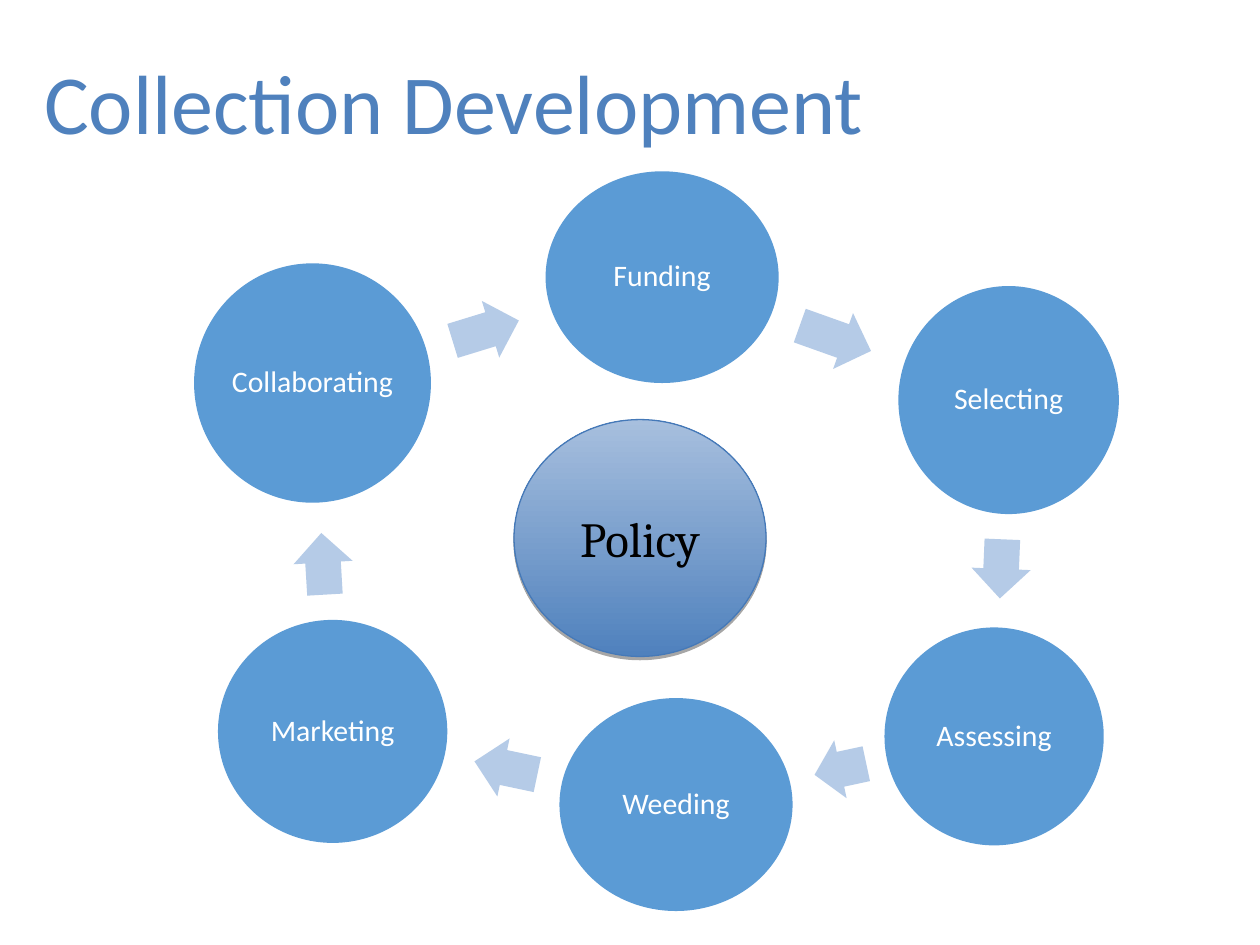
"""Build the Collection Development cycle slide."""
from lxml.etree import SubElement
from pptx import Presentation
from pptx.dml.color import RGBColor
from pptx.enum.shapes import MSO_SHAPE as SHAPE
from pptx.enum.text import MSO_ANCHOR as ANCHOR, MSO_AUTO_SIZE as AUTO_SIZE, PP_ALIGN as ALIGN
from pptx.oxml.ns import qn
from pptx.util import Inches, Pt

COLORS = {
    "title": "4F81BD",
    "step": "5B9BD5",
    "arrow": "B5CBE7",
    "step_text": "FFFFFF",
    "policy_text": "000000",
    "policy_top": "A7BFDE",
    "policy_bottom": "4F81BD",
    "policy_line": "4579B8",
    "policy_shadow": "000000",
}
STEPS = [
    ("Funding", (4.33, 1.36, 1.85, 1.68)),
    ("Selecting", (7.13, 2.27, 1.75, 1.81)),
    ("Assessing", (7.02, 4.98, 1.74, 1.73)),
    ("Weeding", (4.44, 5.54, 1.85, 1.69)),
    ("Marketing", (1.73, 4.92, 1.82, 1.77)),
    ("Collaborating", (1.54, 2.09, 1.88, 1.9)),
]
ARROWS = [
    ((6.33, 2.45, 0.6, 0.47), 19.6),
    ((7.71, 4.28, 0.47, 0.47), 92.4),
    ((6.46, 5.87, 0.42, 0.47), 167.9),
    ((3.76, 5.86, 0.51, 0.47), 191.9),
    ((2.32, 4.24, 0.49, 0.47), 266.6),
    ((3.58, 2.39, 0.55, 0.47), 342.9),
]


def add_plain_shape(kind, box, color):
    shape = slide.shapes.add_shape(kind, *map(Inches, box))
    shape.shadow.inherit = False
    shape.fill.solid()
    shape.fill.fore_color.rgb = RGBColor.from_string(COLORS[color])
    shape.line.fill.background()
    return shape


def set_text(frame, text, font_name, size, color, align):
    frame.text = text
    frame.vertical_anchor = ANCHOR.MIDDLE
    paragraph = frame.paragraphs[0]
    paragraph.alignment = align
    font = paragraph.runs[0].font
    font.name = font_name
    font.size = Pt(size)
    font.color.rgb = RGBColor.from_string(COLORS[color])
    return paragraph


prs = Presentation()
prs.slide_width = Inches(10)
prs.slide_height = Inches(7.5)
slide = prs.slides.add_slide(prs.slide_layouts[5])

title = slide.shapes.title
title.left, title.top, title.width, title.height = map(Inches, (0.25, 0.4, 9.5, 0.8))
title.text_frame.auto_size = AUTO_SIZE.NONE
set_text(title.text_frame, "Collection Development", "Calibri", 48, "title", ALIGN.LEFT)

for (name, step_box), (arrow_box, angle) in zip(STEPS, ARROWS):
    step = add_plain_shape(SHAPE.OVAL, step_box, "step")
    frame = step.text_frame
    frame.margin_left = frame.margin_right = Inches(0.02)
    frame.margin_top = frame.margin_bottom = Inches(0.02)
    label = set_text(frame, name, "Calibri", 17, "step_text", ALIGN.CENTER)
    label.line_spacing = 0.9

    arrow = add_plain_shape(SHAPE.RIGHT_ARROW, arrow_box, "arrow")
    arrow.adjustments[0] = 0.6
    arrow.adjustments[1] = 0.5
    arrow.rotation = angle

policy = add_plain_shape(SHAPE.OVAL, (4.08, 3.33, 2, 1.88), "policy_bottom")
policy.fill.gradient()
policy.fill.gradient_angle = 90
for stop, position, color in zip(policy.fill.gradient_stops, (0, 1), ("policy_bottom", "policy_top")):
    stop.position = position
    stop.color.rgb = RGBColor.from_string(COLORS[color])
policy.line.color.rgb = RGBColor.from_string(COLORS["policy_line"])
policy.line.width = Pt(0.75)
effects = policy.element.spPr.find(qn("a:effectLst"))
shadow = SubElement(effects, qn("a:outerShdw"), blurRad="0", dist=str(Pt(1.8)), dir="5400000", rotWithShape="0")
shadow_color = SubElement(shadow, qn("a:srgbClr"), val=COLORS["policy_shadow"])
SubElement(shadow_color, qn("a:alpha"), val="35000")
set_text(policy.text_frame, "Policy", "Cambria", 28, "policy_text", ALIGN.CENTER)

prs.save("out.pptx")
